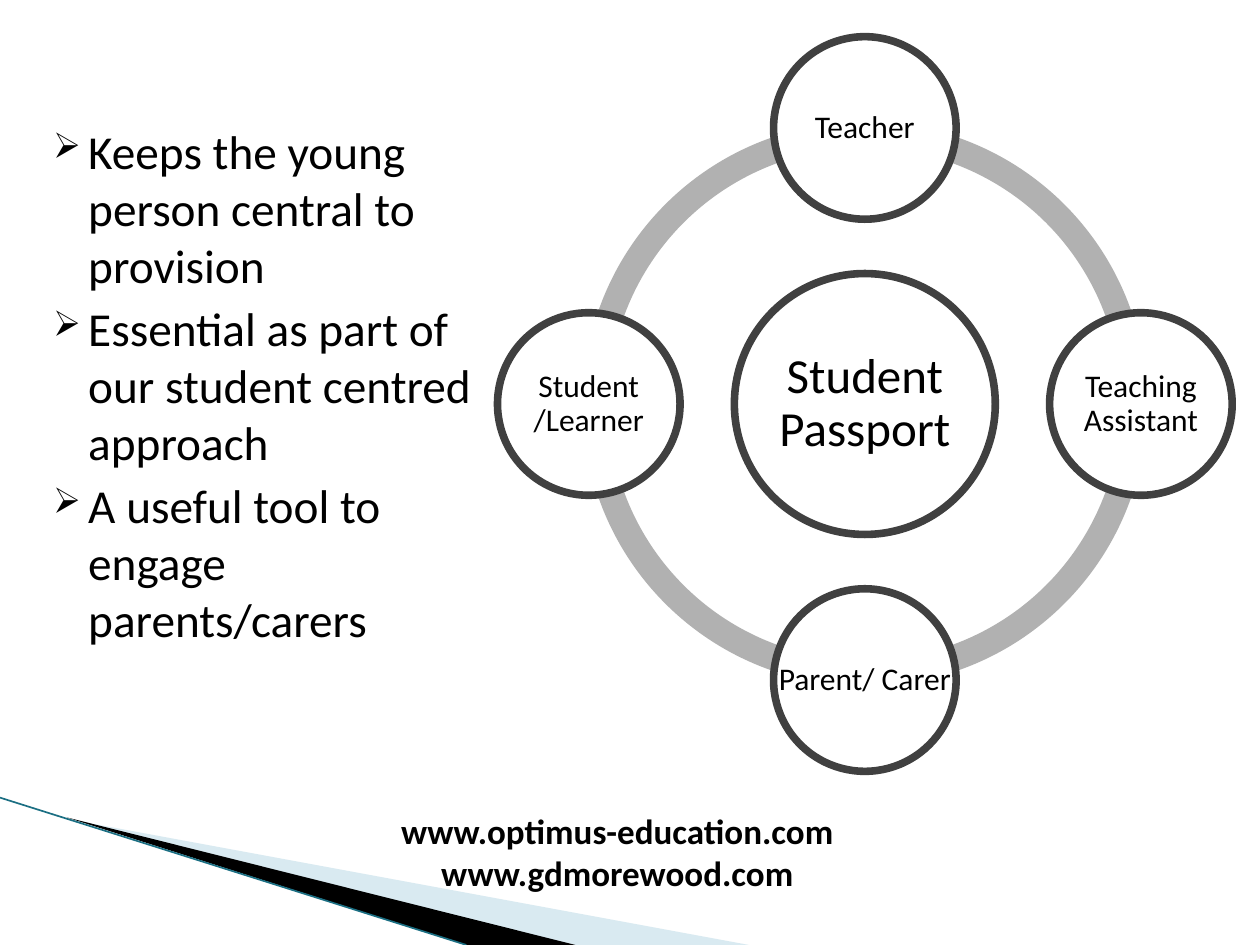
from dataclasses import dataclass
from math import cos, radians, sin

from lxml import etree
from pptx import Presentation
from pptx.dml.color import RGBColor
from pptx.enum.shapes import MSO_CONNECTOR, MSO_SHAPE
from pptx.enum.text import MSO_ANCHOR, PP_ALIGN
from pptx.oxml.ns import qn
from pptx.util import Cm, Pt

ARC, ELLIPSE = MSO_SHAPE.BLOCK_ARC, MSO_SHAPE.OVAL
STRAIGHT = MSO_CONNECTOR.STRAIGHT
TOP, MIDDLE, BOTTOM = MSO_ANCHOR.TOP, MSO_ANCHOR.MIDDLE, MSO_ANCHOR.BOTTOM
CENTER, LEFT = PP_ALIGN.CENTER, PP_ALIGN.LEFT


@dataclass(frozen=True)
class Theme:
    font: str = "Calibri"
    ink: str = "000000"
    paper: str = "FFFFFF"
    outline: str = "404040"
    ring: str = "B1B1B1"
    pale: str = "A0CBDC"
    edge: str = "1B6F83"
    body: int = 27
    hub: int = 28
    node: int = 18
    footer: int = 20
    outline_width: float = 4.33
    edge_width: float = 0.95


@dataclass(frozen=True)
class Box:
    """A region of the page, in centimetres."""
    left: float
    top: float
    width: float
    height: float

    def lengths(self):
        return Cm(self.left), Cm(self.top), Cm(self.width), Cm(self.height)


THEME = Theme()
BULLETS = [
    "Keeps the young person central to provision",
    "Essential as part of our student centred approach",
    "A useful tool to engage parents/carers",
]
HUB = "Student Passport"
NODES = ["Teacher", "Teaching Assistant", "Parent/ Carer", "Student /Learner"]
FOOTER = "www.optimus-education.com www.gdmorewood.com"


def paint(shape, fill, line=None):
    shape.shadow.inherit = False
    shape.fill.solid()
    shape.fill.fore_color.rgb = RGBColor.from_string(fill)
    if line:
        shape.line.color.rgb = RGBColor.from_string(line)
        shape.line.width = Pt(THEME.outline_width)
    else:
        shape.line.fill.background()


def add_bullet(para):
    props = para._p.get_or_add_pPr()
    props.set("marL", str(Cm(1.02)))
    props.set("indent", str(Cm(-0.71)))
    etree.SubElement(props, qn("a:buSzPct"), val="75000")
    etree.SubElement(props, qn("a:buChar"), char="➢")


def add_text(page, box, lines, size, bold=False, align=CENTER, anchor=MIDDLE,
             inset=None, spacing=1.0, bulleted=False):
    frame = page.shapes.add_textbox(*box.lengths()).text_frame
    frame.word_wrap = True
    frame.vertical_anchor = anchor
    if inset is not None:
        for side in ("left", "top", "right", "bottom"):
            setattr(frame, f"margin_{side}", Cm(inset))
    for index, line in enumerate(lines):
        para = frame.add_paragraph() if index else frame.paragraphs[0]
        if bulleted:
            add_bullet(para)
        para.alignment = align
        para.line_spacing = spacing
        if index:
            para.space_before = Pt(4)
        span = para.add_run()
        span.text = line
        style = {"name": THEME.font, "size": Pt(size), "bold": bold}
        for name, value in style.items():
            setattr(span.font, name, value)
        span.font.color.rgb = RGBColor.from_string(THEME.ink)


def add_wedge(page, box, points, fill):
    corners = [(Cm(box.left + x), Cm(box.top + y)) for x, y in points]
    builder = page.shapes.build_freeform(*corners[0])
    builder.add_line_segments(corners[1:], close=True)
    wedge = builder.convert_to_shape()
    paint(wedge, fill)
    return wedge


def add_corner(page, box):
    """Draw the pointed bands that run along the bottom left corner."""
    base = box.height
    pale = add_wedge(page, box, [(1.4, 0.44), (box.width, base), (11.58, base)], THEME.pale)
    color = pale._element.spPr.find(qn("a:solidFill"))[0]
    etree.SubElement(color, qn("a:alpha"), val="40000")
    add_wedge(page, box, [(1.35, 0.4), (11.6, base), (9.4, base)], THEME.ink)
    edge = page.shapes.add_connector(
        STRAIGHT, Cm(box.left), Cm(box.top), Cm(box.left + 9.4), Cm(box.top + base))
    edge.line.color.rgb = RGBColor.from_string(THEME.edge)
    edge.line.width = Pt(THEME.edge_width)
    etree.SubElement(edge._element.spPr, qn("a:effectLst"))


def add_circle(page, x, y, diameter, label, size, inset):
    """Draw a labelled circle; its label may use the full width of the circle."""
    box = Box(x - diameter / 2, y - diameter / 2, diameter, diameter)
    circle = page.shapes.add_shape(ELLIPSE, *box.lengths())
    paint(circle, THEME.paper, THEME.outline)
    add_text(page, box, [label], size, inset=inset, spacing=0.9)


def add_cycle(page, box):
    """Draw a hub inside a ring of arcs, with the nodes clockwise from the top."""
    ring, hub, node = 11.38, 5.26, 3.68
    x, y = box.left + box.width / 2, box.top + box.height / 2
    orbit = (box.width - node) / 2
    step = 360 / len(NODES)
    ring_box = Box(x - ring / 2, y - ring / 2, ring, ring)
    for index in range(len(NODES)):
        arc = page.shapes.add_shape(ARC, *ring_box.lengths())
        start, end = index * step, (index + 1) * step % 360
        # Angles count in 60000ths of a degree, adjustments in 100000ths.
        for place, value in enumerate((start * 0.6, end * 0.6, 0.046)):
            arc.adjustments[place] = value
        paint(arc, THEME.ring)
    add_circle(page, x, y, hub, HUB, THEME.hub, 0.1)
    for index, label in enumerate(NODES):
        angle = radians(index * step - 90)
        add_circle(page, x + orbit * cos(angle), y + orbit * sin(angle),
                   node, label, THEME.node, 0.08)


def main():
    deck = Presentation()
    deck.slide_width, deck.slide_height = Cm(25.4), Cm(19.05)
    page = deck.slides.add_slide(deck.slide_layouts[6])
    add_corner(page, Box(0, 16.08, 15.1, 2.97))
    add_text(page, Box(7.49, 17.12, 9.91, 1.02), [FOOTER], THEME.footer,
             bold=True, anchor=BOTTOM)
    add_text(page, Box(0.51, 2.34, 9.4, 12.57), BULLETS, THEME.body,
             align=LEFT, anchor=TOP, bulleted=True)
    add_cycle(page, Box(10.03, 0.74, 14.81, 14.81))
    deck.save("out.pptx")


if __name__ == "__main__":
    main()
